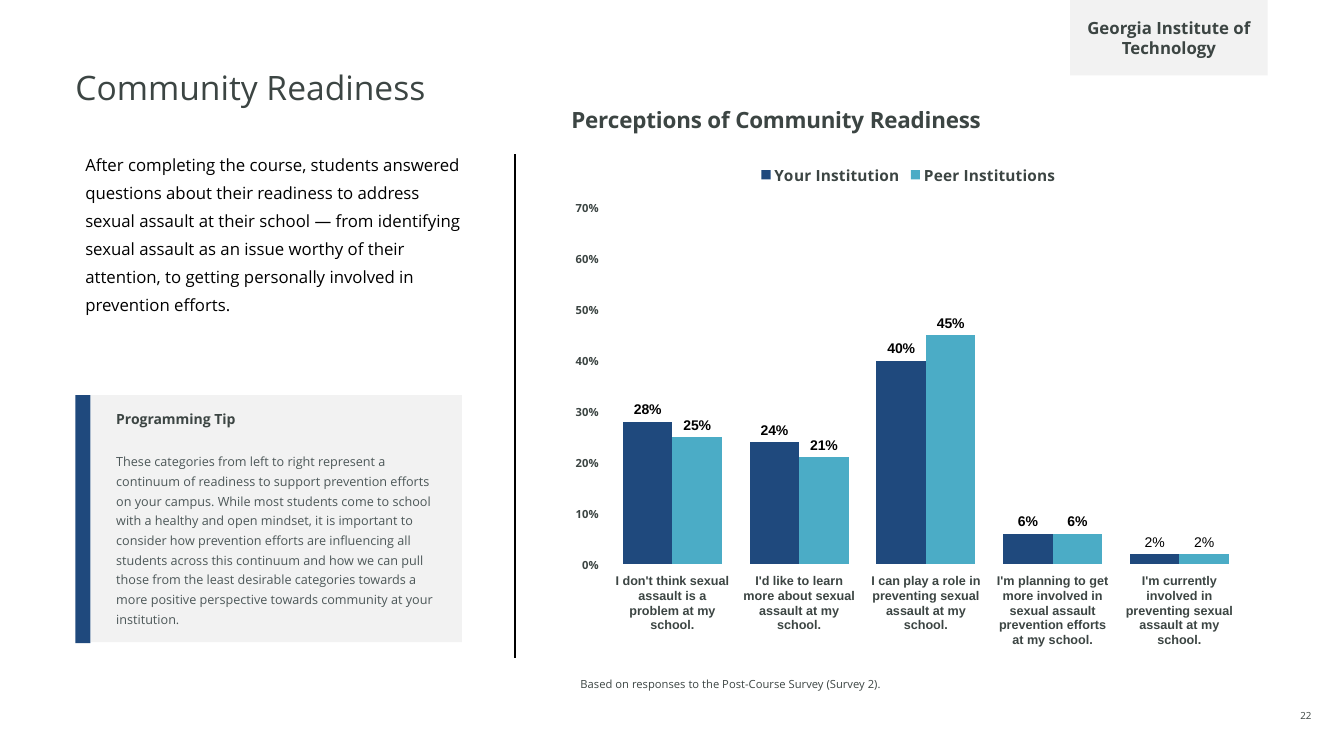
from dataclasses import dataclass

from lxml import etree
from pptx import Presentation
from pptx.chart.data import CategoryChartData
from pptx.dml.color import RGBColor
from pptx.enum.chart import XL_CHART_TYPE, XL_LABEL_POSITION, XL_LEGEND_POSITION
from pptx.enum.shapes import MSO_CONNECTOR, MSO_SHAPE
from pptx.enum.text import MSO_ANCHOR, PP_ALIGN
from pptx.oxml.ns import qn
from pptx.util import Cm, Pt

COLUMNS = XL_CHART_TYPE.COLUMN_CLUSTERED
OUTSIDE_END = XL_LABEL_POSITION.OUTSIDE_END
LEGEND_TOP = XL_LEGEND_POSITION.TOP
STRAIGHT = MSO_CONNECTOR.STRAIGHT
RECTANGLE = MSO_SHAPE.RECTANGLE
TOP, MIDDLE, BOTTOM = MSO_ANCHOR.TOP, MSO_ANCHOR.MIDDLE, MSO_ANCHOR.BOTTOM
LEFT, CENTER = PP_ALIGN.LEFT, PP_ALIGN.CENTER


@dataclass(frozen=True)
class Theme:
    font: str = "Open Sans"
    chart_font: str = "Arial"
    ink: str = "3C4543"
    muted: str = "4C5758"
    black: str = "000000"
    panel: str = "F2F2F2"
    navy: str = "1F497D"
    teal: str = "4BACC6"
    title: float = 24
    chart_title: float = 16
    body: float = 12
    legend: float = 11
    label: float = 10
    tip: float = 9
    small: float = 8
    page_number: float = 7


@dataclass(frozen=True)
class Box:
    left: float
    top: float
    width: float
    height: float

    def lengths(self) -> tuple:
        return Cm(self.left), Cm(self.top), Cm(self.width), Cm(self.height)


@dataclass(frozen=True)
class Series:
    name: str
    values: tuple
    color: str


THEME = Theme()
CATEGORIES = (
    "I don't think sexual assault is a problem at my school.",
    "I'd like to learn more about sexual assault at my school.",
    "I can play a role in preventing sexual assault at my school.",
    "I'm planning to get more involved in sexual assault prevention efforts at my school.",
    "I'm currently involved in preventing sexual assault at my school.",
)
SERIES = (
    Series("Your Institution", (0.28, 0.24, 0.4, 0.06, 0.02), THEME.navy),
    Series("Peer Institutions", (0.25, 0.21, 0.45, 0.06, 0.02), THEME.teal),
)
INTRODUCTION = (
    "After completing the course, students answered questions about their readiness "
    "to address sexual assault at their school — from identifying sexual assault as "
    "an issue worthy of their attention, to getting personally involved in "
    "prevention efforts."
)
TIP = (
    "These categories from left to right represent a continuum of readiness to "
    "support prevention efforts on your campus. While most students come to school "
    "with a healthy and open mindset, it is important to consider how prevention "
    "efforts are influencing all students across this continuum and how we can pull "
    "those from the least desirable categories towards a more positive perspective "
    "towards community at your institution."
)


def style_font(font, size: float, color: str = THEME.ink, bold: bool = False,
               name: str = THEME.font) -> None:
    font.name, font.size, font.bold = name, Pt(size), bold
    font.color.rgb = RGBColor.from_string(color)


def prepare_frame(shape, anchor=TOP, side: float = 0, edge: float = 0):
    frame = shape.text_frame
    frame.word_wrap = True
    frame.vertical_anchor = anchor
    frame.margin_left = frame.margin_right = Cm(side)
    frame.margin_top = frame.margin_bottom = Cm(edge)
    return frame


def write_paragraph(paragraph, text: str, size: float, color: str = THEME.ink,
                    bold: bool = False, align=LEFT, line_spacing=1.0, after: float = 0) -> None:
    paragraph.alignment = align
    paragraph.line_spacing = line_spacing
    paragraph.space_after = Pt(after)
    run = paragraph.add_run()
    run.text = text
    style_font(run.font, size, color, bold)


def add_text(slide, box: Box, text: str, size: float, anchor=TOP, side: float = 0,
             edge: float = 0, **paragraph_format) -> None:
    frame = prepare_frame(slide.shapes.add_textbox(*box.lengths()), anchor, side, edge)
    write_paragraph(frame.paragraphs[0], text, size, **paragraph_format)


def add_panel(slide, box: Box, color: str):
    shape = slide.shapes.add_shape(RECTANGLE, *box.lengths())
    shape.shadow.inherit = False
    shape.fill.solid()
    shape.fill.fore_color.rgb = RGBColor.from_string(color)
    shape.line.fill.background()
    return shape


def add_divider(slide, x: float, top: float, bottom: float) -> None:
    line = slide.shapes.add_connector(STRAIGHT, Cm(x), Cm(top), Cm(x), Cm(bottom))
    line.line.color.rgb = RGBColor.from_string(THEME.black)
    line.line.width = Pt(1)
    etree.SubElement(line.element.spPr, qn("a:effectLst"))


def place_in_chart(chart, part: str, predecessor: str, **fractions: float) -> None:
    element = chart.element.find(f".//{qn(part)}")
    for existing in element.findall(qn("c:layout")):
        element.remove(existing)
    layout = etree.Element(qn("c:layout"))
    manual = etree.SubElement(layout, qn("c:manualLayout"))
    if part == "c:plotArea":
        etree.SubElement(manual, qn("c:layoutTarget")).set("val", "inner")
    for side in ("x", "y"):
        etree.SubElement(manual, qn(f"c:{side}Mode")).set("val", "edge")
    for name, value in fractions.items():
        etree.SubElement(manual, qn(f"c:{name}")).set("val", str(value))
    position = element.index(element.find(qn(predecessor))) + 1 if predecessor else 0
    element.insert(position, layout)


def style_axis(axis, size: float, font_name: str) -> None:
    axis.has_major_gridlines = False
    axis.format.line.fill.background()
    style_font(axis.tick_labels.font, size, bold=True, name=font_name)


def add_readiness_chart(slide, box: Box) -> None:
    data = CategoryChartData(number_format="0%")
    data.categories = CATEGORIES
    for series in SERIES:
        data.add_series(series.name, series.values)
    chart = slide.shapes.add_chart(COLUMNS, *box.lengths(), data).chart
    style_font(chart.font, THEME.small)

    chart.has_title = True
    write_paragraph(chart.chart_title.text_frame.paragraphs[0],
                    "Perceptions of Community Readiness", THEME.chart_title, bold=True)
    chart.has_legend = True
    chart.legend.position = LEGEND_TOP
    chart.legend.include_in_layout = False
    style_font(chart.legend.font, THEME.legend, bold=True)

    style_axis(chart.category_axis, THEME.tip, THEME.chart_font)
    style_axis(chart.value_axis, THEME.small, THEME.font)
    chart.value_axis.minimum_scale, chart.value_axis.maximum_scale = 0, 0.7
    chart.value_axis.major_unit = 0.1
    chart.value_axis.tick_labels.number_format = "0%"
    chart.value_axis.tick_labels.number_format_is_linked = False

    plot = chart.plots[0]
    plot.gap_width, plot.overlap, plot.vary_by_categories = 56, 0, False
    for drawn, series in zip(plot.series, SERIES):
        drawn.format.fill.solid()
        drawn.format.fill.fore_color.rgb = RGBColor.from_string(series.color)
        labels = drawn.data_labels
        labels.show_value, labels.position = True, OUTSIDE_END
        labels.number_format, labels.number_format_is_linked = "0%", False
        style_font(labels.font, THEME.label, THEME.black, True, THEME.chart_font)
        last_label = drawn.points[len(CATEGORIES) - 1].data_label
        style_font(last_label.font, THEME.label, THEME.black, False, THEME.chart_font)
        last_label.position = OUTSIDE_END

    place_in_chart(chart, "c:title", "c:tx", x=0.01, y=0.01)
    place_in_chart(chart, "c:legend", "c:legendPos", x=0.28, y=0.12, w=0.44, h=0.05)
    place_in_chart(chart, "c:plotArea", "", x=0.07, y=0.204, w=0.91, h=0.63)


def main() -> None:
    presentation = Presentation()
    presentation.slide_width, presentation.slide_height = Cm(33.87), Cm(19.05)
    slide = presentation.slides.add_slide(presentation.slide_layouts[6])

    add_text(slide, Box(1.9, 1.8, 30.05, 1.78), "Community Readiness", THEME.title,
             line_spacing=0.9)
    add_text(slide, Box(14.63, 17.02, 15.27, 0.38),
             "Based on responses to the Post-Course Survey (Survey 2).", THEME.small,
             anchor=BOTTOM, line_spacing=Pt(12), after=2)
    add_text(slide, Box(32.26, 17.81, 1.3, 0.38), "22", THEME.page_number,
             anchor=BOTTOM, align=CENTER)
    add_readiness_chart(slide, Box(14.12, 2.34, 17.55, 14.25))
    add_divider(slide, 12.98, 3.89, 16.59)
    add_text(slide, Box(1.9, 3.58, 10.29, 4.47), INTRODUCTION, THEME.body, side=0.25,
             edge=0.13, color=THEME.black, line_spacing=Pt(20), after=2)

    tip = prepare_frame(add_panel(slide, Box(2.29, 9.96, 9.35, 6.22), THEME.panel),
                        MIDDLE, side=0.64)
    write_paragraph(tip.paragraphs[0], "Programming Tip", THEME.label, bold=True,
                    line_spacing=Pt(12), after=16)
    write_paragraph(tip.add_paragraph(), TIP, THEME.tip, THEME.muted,
                    line_spacing=1.3, after=2)
    add_panel(slide, Box(1.9, 9.96, 0.38, 6.25), THEME.navy)

    badge = prepare_frame(add_panel(slide, Box(26.97, 0, 4.98, 1.9), THEME.panel),
                          MIDDLE, side=0.25)
    write_paragraph(badge.paragraphs[0], "Georgia Institute of Technology", THEME.body,
                    bold=True, align=CENTER)
    presentation.save("out.pptx")


if __name__ == "__main__":
    main()
